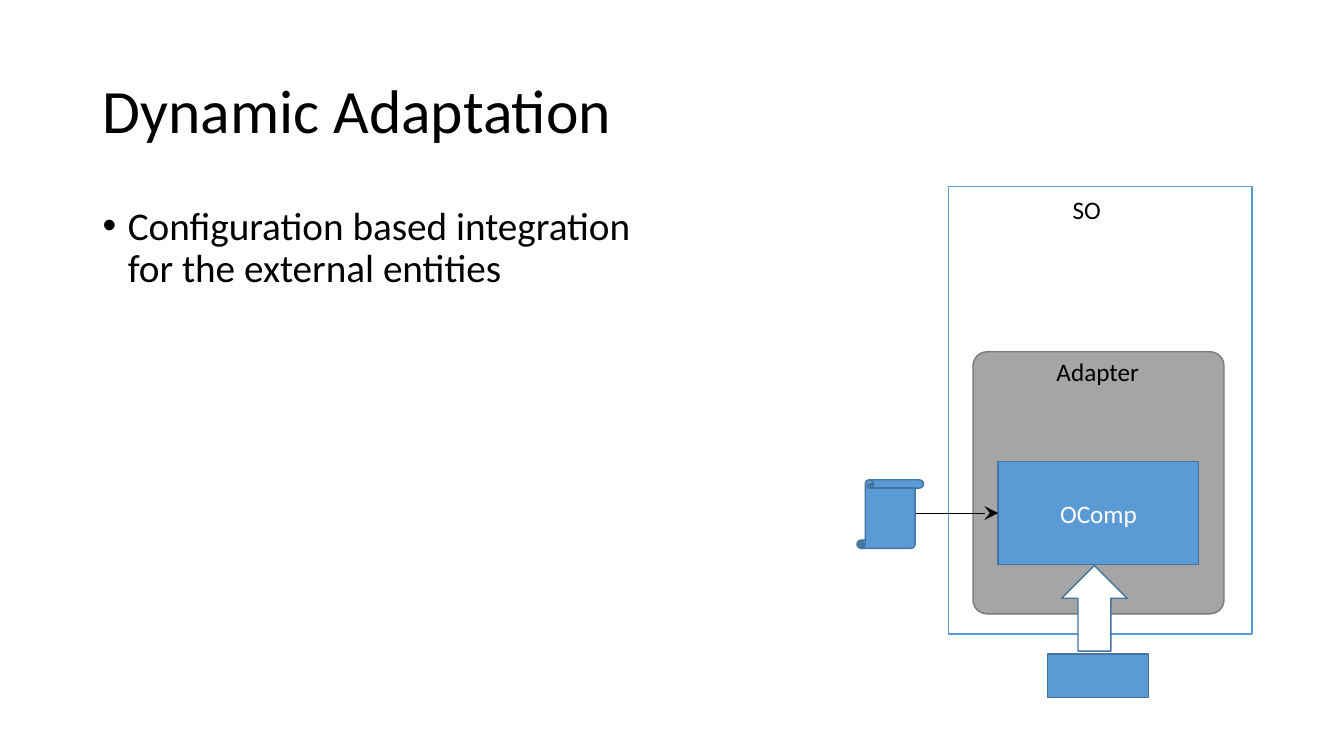
from lxml.etree import SubElement
from pptx import Presentation
from pptx.dml.color import RGBColor
from pptx.enum.shapes import MSO_CONNECTOR as Link, MSO_SHAPE as Form
from pptx.enum.text import MSO_ANCHOR as Anchor, PP_ALIGN as Align
from pptx.oxml.ns import qn
from pptx.util import Inches, Pt

BLACK = RGBColor(0x00, 0x00, 0x00)
WHITE = RGBColor(0xFF, 0xFF, 0xFF)
BLUE = RGBColor(0x5B, 0x9B, 0xD5)
NAVY = RGBColor(0x43, 0x73, 0x9E)
GRAY = RGBColor(0xA5, 0xA5, 0xA5)
SLATE = RGBColor(0x7A, 0x7A, 0x7A)


def write(frame, text, size=18, color=BLACK, align=Align.LEFT,
          anchor=Anchor.TOP, wrap=True, space=1.0, bullet=None):
    frame.word_wrap = wrap
    frame.vertical_anchor = anchor
    para = frame.paragraphs[0]
    para.alignment = align
    para.line_spacing = space
    if bullet:
        props = para._p.get_or_add_pPr()
        props.set("marL", str(Inches(0.25)))
        props.set("indent", str(-Inches(0.25)))
        SubElement(props, qn("a:buFont"), typeface="Arial")
        SubElement(props, qn("a:buChar"), char=bullet)
    run = para.add_run()
    run.text = text
    run.font.name = "Calibri"
    run.font.size = Pt(size)
    run.font.color.rgb = color


class Board:
    def __init__(self, slide):
        self.shapes = slide.shapes

    def label(self, text, x, y, w, h, **style):
        box = self.shapes.add_textbox(Inches(x), Inches(y), Inches(w), Inches(h))
        write(box.text_frame, text, **style)

    def block(self, form, x, y, w, h, fill=BLUE, edge=NAVY):
        shape = self.shapes.add_shape(form, Inches(x), Inches(y), Inches(w), Inches(h))
        shape.shadow.inherit = False
        shape.fill.solid()
        shape.fill.fore_color.rgb = fill
        shape.line.color.rgb = edge
        shape.line.width = Pt(1)
        return shape

    def arrow(self, x, y, target, side):
        """Draw a thin arrow from a point to one side of the target."""
        line = self.shapes.add_connector(
            Link.STRAIGHT, Inches(x), Inches(y), Inches(x), Inches(y))
        line.end_connect(target, side)
        line.line.color.rgb = BLACK
        line.line.width = Pt(0.5)
        SubElement(line.line._get_or_add_ln(), qn("a:tailEnd"),
                   type="stealth", w="lg", len="lg")
        SubElement(line._element.spPr, qn("a:effectLst"))


def main():
    deck = Presentation()
    deck.slide_width = Inches(13.33)
    deck.slide_height = Inches(7.5)
    board = Board(deck.slides.add_slide(deck.slide_layouts[6]))

    board.label("Dynamic Adaptation", 0.92, 0.4, 11.5, 1.45,
                size=44, anchor=Anchor.MIDDLE, space=0.9)
    board.label("Configuration based integration for the external entities",
                0.92, 2, 5.47, 4.76, size=28, space=0.9, bullet="•")

    board.block(Form.RECTANGLE, 9.41, 1.85, 3.01, 4.44, fill=WHITE, edge=BLUE)
    adapter = board.block(Form.ROUNDED_RECTANGLE, 9.65, 3.49, 2.49, 2.6,
                          fill=GRAY, edge=SLATE)
    adapter.adjustments[0] = 0.056
    board.label("Adapter", 10.38, 3.49, 1.03, 0.4, wrap=False)
    board.label("SO", 10.54, 1.88, 0.48, 0.4, wrap=False)

    comp = board.block(Form.RECTANGLE, 9.9, 4.58, 1.99, 1.02)
    write(comp.text_frame, "OComp", color=WHITE, align=Align.CENTER,
          anchor=Anchor.MIDDLE)
    board.arrow(9.08, 5.09, comp, 1)

    feed = board.block(Form.RIGHT_ARROW, 10.43, 5.71, 0.85, 0.65, fill=WHITE)
    feed.rotation = 270
    board.block(Form.VERTICAL_SCROLL, 8.5, 4.76, 0.66, 0.68)
    board.block(Form.RECTANGLE, 10.39, 6.49, 1, 0.43)

    deck.save("out.pptx")


if __name__ == "__main__":
    main()
